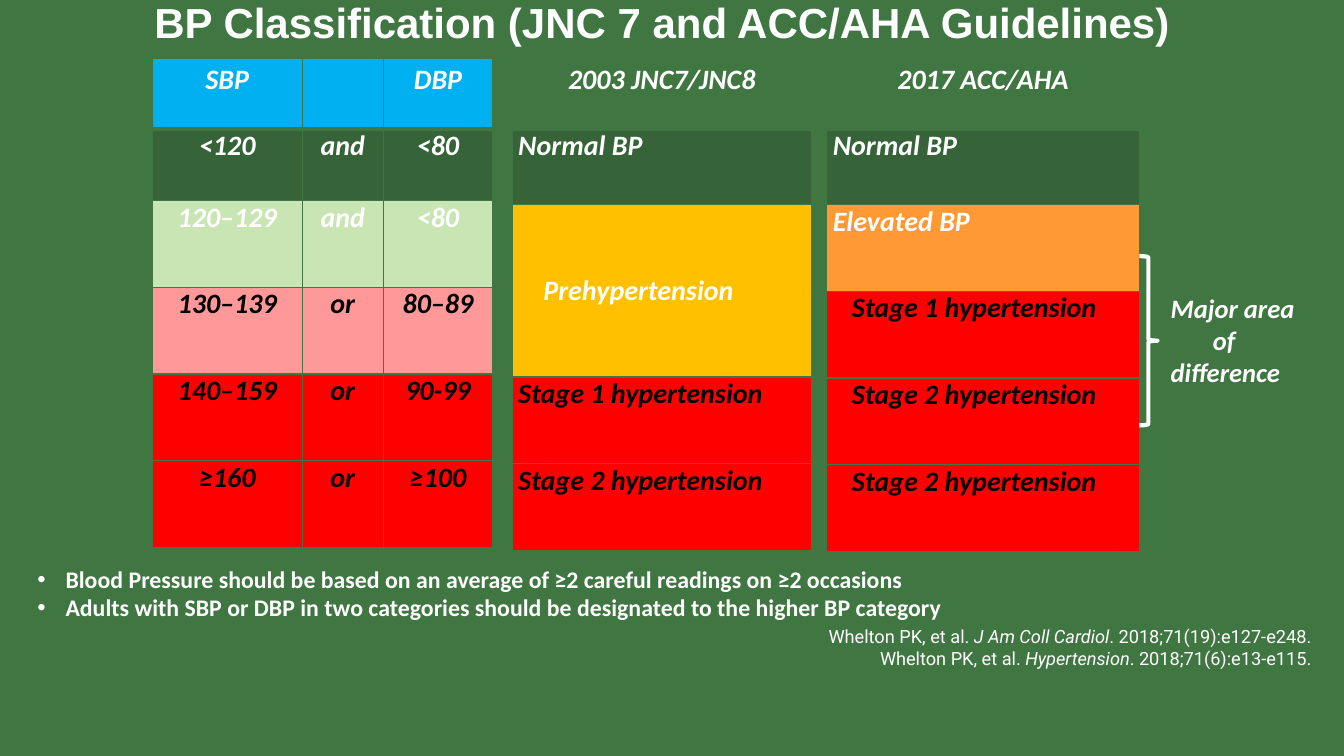
from dataclasses import dataclass

from pptx import Presentation
from pptx.dml.color import RGBColor
from pptx.enum.shapes import MSO_SHAPE
from pptx.enum.text import MSO_ANCHOR, MSO_AUTO_SIZE, PP_ALIGN
from pptx.oxml.ns import qn
from pptx.util import Inches, Pt
from lxml.etree import SubElement


@dataclass(frozen=True)
class Theme:
    ground: str = "407642"
    white: str = "FFFFFF"
    black: str = "000000"
    header: str = "00B0F0"
    normal: str = "366438"
    light: str = "C9E5B4"
    pink: str = "FF9999"
    red: str = "FF0000"
    amber: str = "FFC000"
    orange: str = "FF9933"
    title_size: float = 30
    table_size: float = 20
    label_size: float = 19
    body_size: float = 17
    source_size: float = 13
    title_font: str = "Arial"
    body_font: str = "Calibri"
    source_font: str = "Roboto"


def rgb(value):
    return RGBColor.from_string(value)


def apply(obj, values):
    for name, value in values.items():
        setattr(obj, name, value)


class Deck:
    def __init__(self, prs, theme):
        self.theme = theme
        self.slide = prs.slides.add_slide(prs.slide_layouts[1])
        fill = self.slide.background.fill
        fill.solid()
        fill.fore_color.rgb = rgb(theme.ground)

    def style(self, font, color, **values):
        apply(font, values)
        font.color.rgb = rgb(color)

    def fill_text(self, sp, box, lines, wrap=True, align=PP_ALIGN.LEFT,
                  bullet=None, indents=None, **font):
        apply(sp, dict(zip(("left", "top", "width", "height"), map(Inches, box))))
        tf = sp.text_frame
        apply(tf, {"word_wrap": wrap, "auto_size": MSO_AUTO_SIZE.NONE,
                   "margin_left": Inches(0.12), "margin_right": Inches(0.12),
                   "margin_top": Inches(0.06), "margin_bottom": Inches(0.06)})
        for i, line in enumerate(lines):
            p = tf.paragraphs[0] if i == 0 else tf.add_paragraph()
            apply(p, {"alignment": align, "space_before": Pt(0)})
            pPr = p._p.get_or_add_pPr()
            if bullet:
                pPr.set("marL", str(Inches(0.28)))
                pPr.set("indent", str(-Inches(0.28)))
                SubElement(pPr, qn("a:buChar")).set("char", bullet)
            elif indents:
                pPr.set("marL", str(Inches(indents[i])))
            for text, extra in line:
                r = p.add_run()
                r.text = text
                self.style(r.font, self.theme.white, **{**font, **extra})

    def title(self, box, text, **font):
        self.fill_text(self.slide.shapes.title, box, [[(text, {})]],
                       wrap=False, align=PP_ALIGN.CENTER, **font)

    def bullets(self, box, lines, **font):
        self.fill_text(self.slide.placeholders[1], box,
                       [[(line, {})] for line in lines], bullet="•", **font)

    def text(self, box, lines, **values):
        self.fill_text(self.slide.shapes.add_textbox(0, 0, 0, 0), box, lines, **values)

    def brace(self, box):
        sp = self.slide.shapes.add_shape(MSO_SHAPE.RIGHT_BRACE, *map(Inches, box))
        sp.shadow.inherit = False
        sp.fill.background()
        sp.line.color.rgb = rgb(self.theme.white)
        sp.line.width = Pt(3)
        sp.adjustments[0] = 0.08

    def border(self, cell, side, width):
        ln = SubElement(cell._tc.get_or_add_tcPr(), qn(f"a:ln{side}"))
        ln.set("w", str(Pt(width)))
        fill = SubElement(ln, qn("a:solidFill"))
        SubElement(fill, qn("a:srgbClr")).set("val", self.theme.ground)

    def table(self, left, widths, heights, rows, align):
        frame = self.slide.shapes.add_table(
            len(rows), len(widths), Inches(left), Inches(0.58),
            Inches(sum(widths)), Inches(sum(heights)))
        table = frame.table
        apply(table, {"first_row": False, "horz_banding": False})
        for col, width in zip(table.columns, widths):
            col.width = Inches(width)
        for i, (height, (fill, color, indent, texts)) in enumerate(zip(heights, rows)):
            table.rows[i].height = Inches(height)
            for j, text in enumerate(texts):
                self.cell(table.cell(i, j), i, text, fill, color, indent, align)

    def cell(self, cell, row, text, fill, color, indent, align):
        side, edge = (0.08, 0.04) if row == 0 else (0.06, 0)
        middle = fill == self.theme.amber
        apply(cell, {"margin_left": Inches(side + indent), "margin_right": Inches(side),
                     "margin_top": Inches(edge), "margin_bottom": Inches(edge),
                     "vertical_anchor": MSO_ANCHOR.MIDDLE if middle else MSO_ANCHOR.TOP})
        for name, width in (("L", 1), ("R", 1), ("T", 3 if row == 1 else 1),
                            ("B", 3 if row == 0 else 1)):
            self.border(cell, name, width)
        cell.fill.solid()
        cell.fill.fore_color.rgb = rgb(fill)
        p = cell.text_frame.paragraphs[0]
        p.alignment = PP_ALIGN.CENTER if row == 0 else align
        if text:
            r = p.add_run()
            r.text = text
            self.style(r.font, color, name=self.theme.body_font, bold=True,
                       italic=True, size=Pt(self.theme.table_size))


def main():
    prs = Presentation()
    prs.slide_width, prs.slide_height = Inches(13.33), Inches(7.5)
    t = Theme()
    deck = Deck(prs, t)

    deck.title((1.35, -0.1, 10.44, 0.63), "BP Classification (JNC 7 and ACC/AHA Guidelines)",
               name=t.title_font, size=Pt(t.title_size), bold=True)

    head, step = 0.7, 0.86
    deck.table(1.51, [1.49, 0.8, 1.09], [head, 0.71] + [step] * 4, [
        (t.header, t.white, 0, ["SBP", "", "DBP"]),
        (t.normal, t.white, 0, ["<120", "and", "<80"]),
        (t.light, t.white, 0, ["120–129", "and", "<80"]),
        (t.pink, t.black, 0, ["130–139", "or", "80–89"]),
        (t.red, t.black, 0, ["140–159", "or", "90-99"]),
        (t.red, t.black, 0, ["≥160", "or", "≥100"]),
    ], PP_ALIGN.CENTER)
    deck.table(5.08, [2.97], [head, 0.75, 1.71, step, step], [
        (t.ground, t.white, 0, ["2003 JNC7/JNC8"]),
        (t.normal, t.white, 0, ["Normal BP"]),
        (t.amber, t.white, 0.25, ["Prehypertension"]),
        (t.red, t.black, 0, ["Stage 1 hypertension"]),
        (t.red, t.black, 0, ["Stage 2 hypertension"]),
    ], PP_ALIGN.JUSTIFY)
    deck.table(8.2, [3.1], [head, 0.75] + [step] * 4, [
        (t.ground, t.white, 0, ["2017 ACC/AHA"]),
        (t.normal, t.white, 0, ["Normal BP"]),
        (t.orange, t.white, 0, ["Elevated BP"]),
        (t.red, t.black, 0.19, ["Stage 1 hypertension"]),
        (t.red, t.black, 0.19, ["Stage 2 hypertension"]),
        (t.red, t.black, 0.19, ["Stage 2 hypertension"]),
    ], PP_ALIGN.JUSTIFY)

    deck.brace((11.3, 2.54, 0.18, 1.68))
    deck.text((11.49, 2.84, 1.48, 1.08),
              [[(line, {})] for line in ("Major area", "of", "difference")],
              wrap=False, indents=(0, 0.42, 0), name=t.body_font,
              size=Pt(t.label_size), bold=True, italic=True)
    deck.bullets((0.25, 5.54, 10.12, 0.69), [
        "Blood Pressure should be based on an average of ≥2 careful readings on ≥2 occasions",
        "Adults with SBP or DBP in two categories should be designated to the higher BP category",
    ], name=t.body_font, size=Pt(t.body_size), bold=True)
    journals = (("J Am Coll Cardiol", ". 2018;71(19):e127-e248. "),
                ("Hypertension", ". 2018;71(6):e13-e115. "))
    deck.text((7.55, 6.14, 5.62, 0.56), [
        [("Whelton PK, et al. ", {}), (journal, {"italic": True}), (issue, {})]
        for journal, issue in journals
    ], align=PP_ALIGN.RIGHT, name=t.source_font, size=Pt(t.source_size))

    prs.save("out.pptx")


if __name__ == "__main__":
    main()
